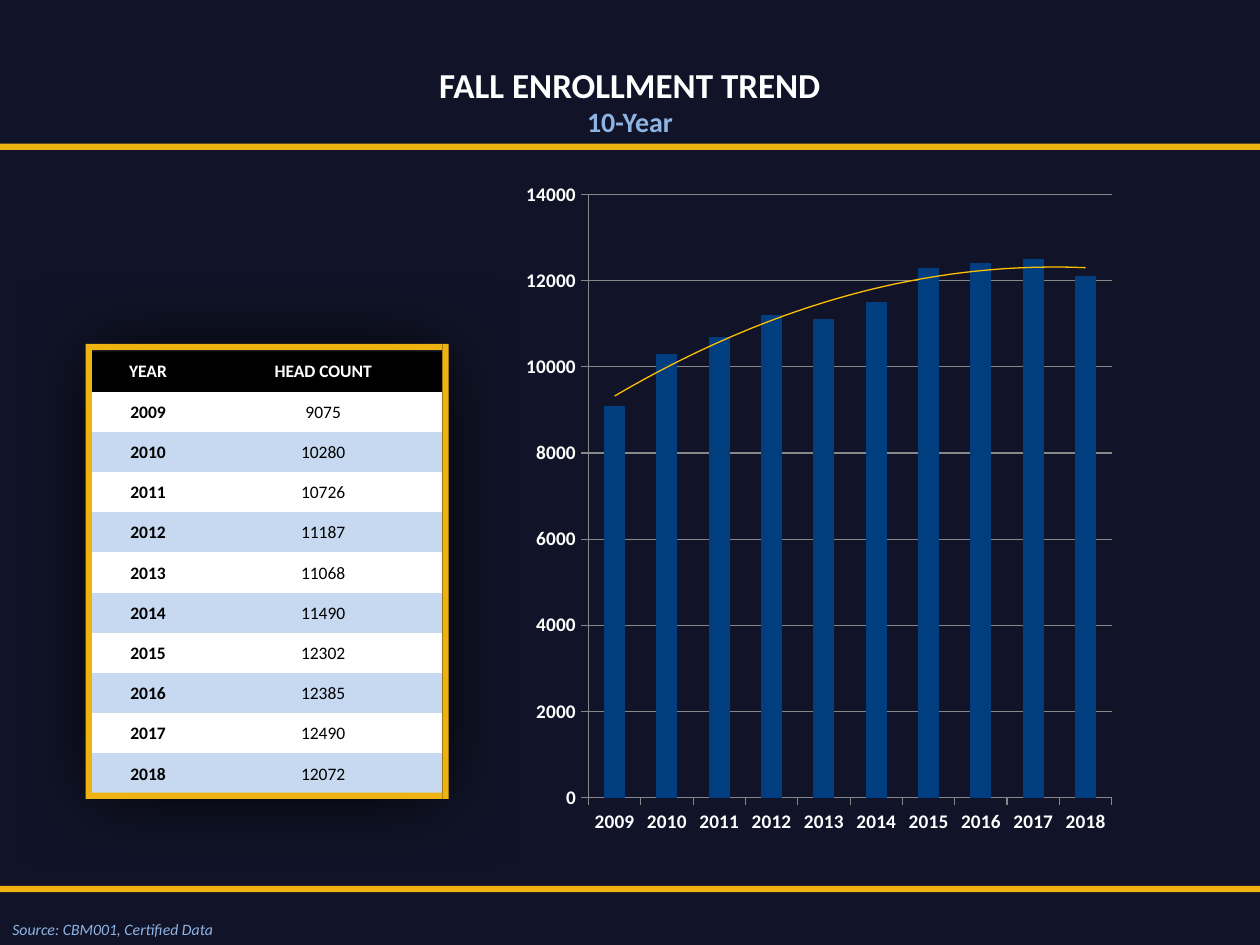
from lxml import etree
from pptx import Presentation
from pptx.chart.data import CategoryChartData
from pptx.dml.color import RGBColor
from pptx.enum.chart import XL_CHART_TYPE as ChartType, XL_TICK_MARK as TickMark
from pptx.enum.shapes import MSO_SHAPE as Shape
from pptx.enum.text import MSO_ANCHOR as Anchor, MSO_AUTO_SIZE as AutoSize, PP_ALIGN as Align
from pptx.oxml import parse_xml
from pptx.oxml.ns import nsdecls, qn
from pptx.util import Inches, Pt

FONT = "Calibri"
COLORS = {
    "background": "111428", "gold": "EEB211", "white": "FFFFFF", "black": "000000",
    "band": "C6D9F1", "light_blue": "8EB4E3", "bar": "003E80", "trend": "FFC000",
    "grid": "878787",
}
TITLE = [("FALL ENROLLMENT TREND", 20, "white"), ("10-Year", 16, "light_blue")]
SOURCE = "Source: CBM001, Certified Data"
HEADERS = ("YEAR", "HEAD COUNT")
HEAD_COUNTS = {
    "2009": 9075, "2010": 10280, "2011": 10726, "2012": 11187, "2013": 11068,
    "2014": 11490, "2015": 12302, "2016": 12385, "2017": 12490, "2018": 12072,
}
COLUMN_WIDTHS = (0.89, 1.89)
TABLE_BOX = (0.73, 2.79, 2.78, 3.51)
CHART_BOX = (4.03, 1.45, 6.1, 5.49)
PLOT_LAYOUT = {"x": 0.105, "y": 0.015, "w": 0.681, "h": 0.874}
BARS = [
    (0, 7.03, 10.01, 0), (0, 1.14, 10, 0),
    (0.73, 6.29, 2.78, 0), (0.73, 2.73, 2.78, 0),
    (1.73, 4.51, 3.61, 90), (-1.1, 4.51, 3.61, 90),
]
BAR_THICKNESS = 0.05


def color(name):
    return RGBColor.from_string(COLORS[name])


def inches(box):
    return [Inches(length) for length in box]


def fill_solid(target, name):
    target.fill.solid()
    target.fill.fore_color.rgb = color(name)


def format_font(font, size, name, bold=False, italic=False):
    font.name, font.size = FONT, Pt(size)
    font.bold, font.italic = bold, italic
    font.color.rgb = color(name)


def write(paragraph, text, align=Align.CENTER, **style):
    paragraph.alignment = align
    run = paragraph.add_run()
    run.text = text
    format_font(run.font, **style)


def add_title(slide):
    title = slide.shapes.title
    title.left, title.top, title.width, title.height = inches((0, 0.45, 10, 1.01))
    frame = title.text_frame
    frame.word_wrap = True
    frame.auto_size = AutoSize.NONE
    frame.vertical_anchor = Anchor.TOP
    for index, (text, size, name) in enumerate(TITLE):
        paragraph = frame.add_paragraph() if index else frame.paragraphs[0]
        write(paragraph, text, size=size, name=name, bold=True)


def add_source(slide):
    frame = slide.shapes.add_textbox(*inches((0, 7.25, 1.84, 0.25))).text_frame
    frame.word_wrap = False
    write(frame.paragraphs[0], SOURCE, Align.LEFT, size=9, name="light_blue", italic=True)


def add_head_count_table(slide):
    rows = [HEADERS, *HEAD_COUNTS.items()]
    table = slide.shapes.add_table(len(rows), len(HEADERS), *inches(TABLE_BOX)).table
    properties = table._tbl.tblPr
    properties.find(qn("a:tableStyleId")).text = "{2D5ABB26-0587-4C30-8999-92F81FD0307C}"
    properties.insert(0, parse_xml(
        f'<a:effectLst {nsdecls("a")}><a:outerShdw blurRad="{Inches(0.6)}" dist="0" '
        'algn="ctr" rotWithShape="0"><a:srgbClr val="000000"/></a:outerShdw></a:effectLst>'))
    for column, width in zip(table.columns, COLUMN_WIDTHS):
        column.width = Inches(width)
    for row_index, values in enumerate(rows):
        header = row_index == 0
        table.rows[row_index].height = Inches(TABLE_BOX[3] / len(rows))
        background = "black" if header else "white" if row_index % 2 else "band"
        for column_index, value in enumerate(values):
            cell = table.cell(row_index, column_index)
            fill_solid(cell, background)
            cell.vertical_anchor = Anchor.MIDDLE
            margin = Inches(0.04 if header else 0.01)
            cell.margin_left = cell.margin_right = cell.margin_top = margin
            cell.margin_bottom = margin if header else 0
            write(cell.text_frame.paragraphs[0], str(value), size=10,
                  name="white" if header else "black", bold=header or column_index == 0)


def add_trend_chart(slide):
    data = CategoryChartData()
    data.categories = list(HEAD_COUNTS)
    data.add_series("Series 1", [round(count, -2) for count in HEAD_COUNTS.values()])
    chart = slide.shapes.add_chart(ChartType.COLUMN_CLUSTERED, *inches(CHART_BOX), data).chart
    chart.has_legend = chart.has_title = False
    format_font(chart.font, 18, "black")
    chart.font._element.getparent().getparent().getparent().addprevious(parse_xml(
        f'<c:spPr {nsdecls("c", "a")}><a:noFill/><a:ln><a:noFill/></a:ln></c:spPr>'))

    for axis in (chart.category_axis, chart.value_axis):
        axis.major_tick_mark = TickMark.OUTSIDE
        format_font(axis.tick_labels.font, 11, "white", bold=True)
        axis.format.line.color.rgb = color("grid")
        axis.format.line.width = Pt(0.75)
    value_axis = chart.value_axis
    value_axis.minimum_scale, value_axis.maximum_scale, value_axis.major_unit = 0, 14000, 2000
    gridline = value_axis.major_gridlines.format.line
    gridline.color.rgb, gridline.width = color("grid"), Pt(0.75)

    plot = chart.plots[0]
    plot.gap_width = 150
    plot.vary_by_categories = False
    series = plot.series[0]
    fill_solid(series.format, "bar")
    series._element.find(qn("c:cat")).addprevious(parse_xml(
        f'<c:trendline {nsdecls("c", "a")}><c:spPr><a:ln w="{Pt(0.75)}"><a:solidFill>'
        f'<a:srgbClr val="{COLORS["trend"]}"/></a:solidFill></a:ln></c:spPr>'
        '<c:trendlineType val="poly"/><c:order val="2"/><c:dispRSqr val="0"/>'
        '<c:dispEq val="0"/></c:trendline>'))

    plot_area = chart._chartSpace.chart.plotArea
    for old_layout in plot_area.findall(qn("c:layout")):
        plot_area.remove(old_layout)
    layout = etree.Element(qn("c:layout"))
    manual = etree.SubElement(layout, qn("c:manualLayout"))
    settings = {"layoutTarget": "inner", "xMode": "edge", "yMode": "edge", **PLOT_LAYOUT}
    for tag, value in settings.items():
        etree.SubElement(manual, qn(f"c:{tag}")).set("val", str(value))
    plot_area.insert(0, layout)


def add_bars(slide):
    for left, top, length, rotation in BARS:
        bar = slide.shapes.add_shape(
            Shape.RECTANGLE, *inches((left, top, length, BAR_THICKNESS)))
        bar.rotation = rotation
        bar.shadow.inherit = False
        fill_solid(bar, "gold")
        bar.line.fill.background()


def main():
    presentation = Presentation()
    presentation.slide_width, presentation.slide_height = Inches(10), Inches(7.5)
    slide = presentation.slides.add_slide(presentation.slide_layouts[5])
    fill_solid(slide.background, "background")
    add_head_count_table(slide)
    add_trend_chart(slide)
    add_title(slide)
    add_source(slide)
    add_bars(slide)
    presentation.save("out.pptx")


if __name__ == "__main__":
    main()
